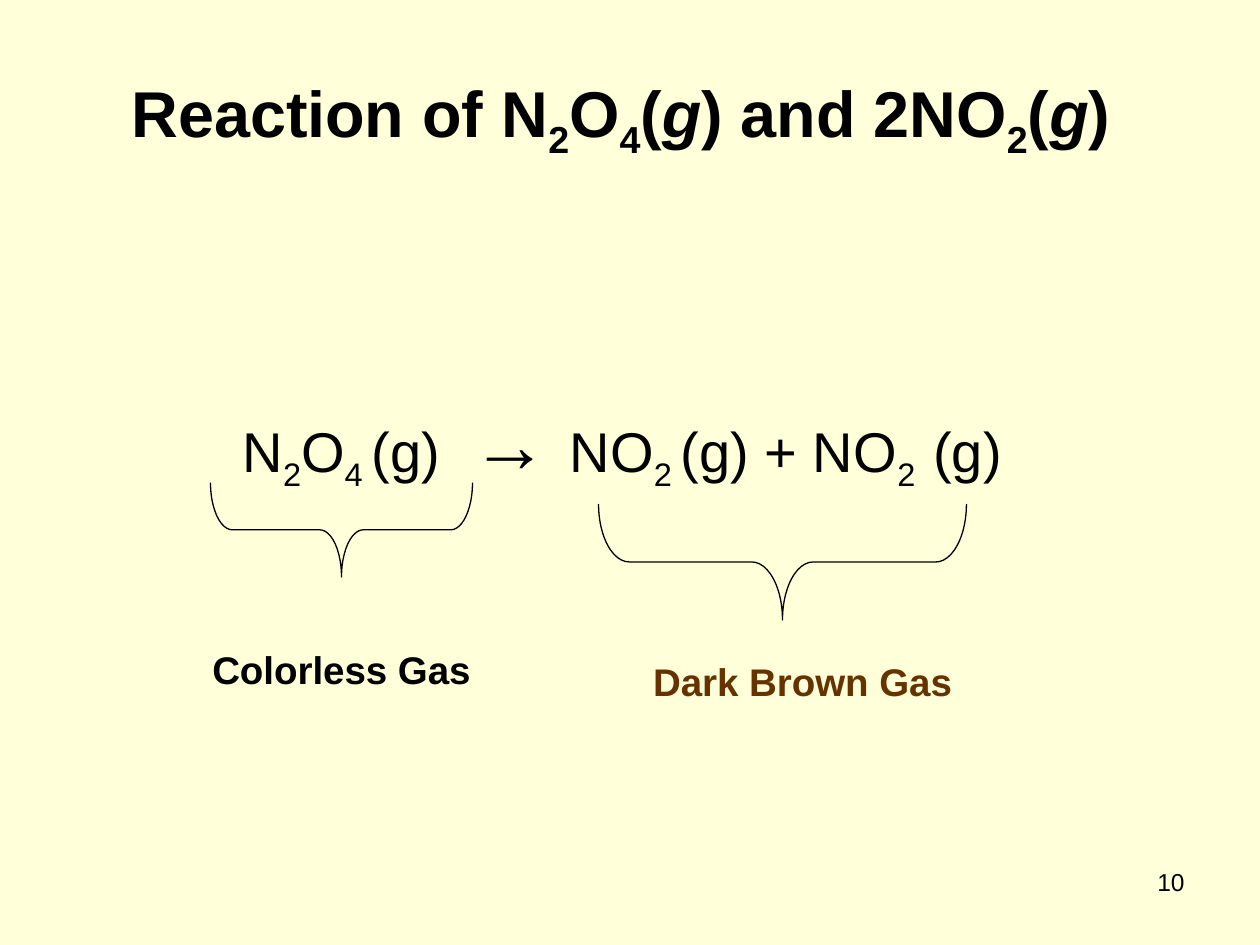
from pptx import Presentation
from pptx.dml.color import RGBColor
from pptx.enum.shapes import MSO_SHAPE
from pptx.enum.text import MSO_ANCHOR, PP_ALIGN
from pptx.util import Inches, Pt

BACKGROUND, BLACK, BROWN = "FFFFD9", "000000", "663300"
SUB = {"subscript": True}
ITALIC = {"italic": True}

TITLE = [
    ("Reaction of N", {}), ("2", SUB), ("O", {}), ("4", SUB), ("(", {}), ("g", ITALIC),
    (") and 2NO", {}), ("2", SUB), ("(", {}), ("g", ITALIC), (") ", {}),
]
EQUATION = [
    ("N", {}), ("2", SUB), ("O", {}), ("4 ", SUB), ("(g)  ", {}), ("→ ", {"size": 44}),
    ("NO", {}), ("2 ", SUB), ("(g) + NO", {}), ("2  ", SUB), ("(g) ", {}),
]
# left, top, width, height as they appear on the slide, then the curve of the brace
BRACES = [
    (4.75, 4.0, 2.92, 0.92, 0.265),
    (1.67, 3.83, 2.08, 0.75, 0.231),
]
GAS_LABELS = [
    ("Dark Brown Gas", 4.83, 5.17, BROWN),
    ("Colorless Gas", 1.17, 5.08, BLACK),
]


def rgb(color):
    return RGBColor.from_string(color)


def add_text(slide, text, left, top, width, height, *, size, color=BLACK, bold=False,
             align=PP_ALIGN.CENTER, anchor=MSO_ANCHOR.TOP):
    """Add one paragraph; text is a string or a list of (string, format) runs."""
    box = slide.shapes.add_textbox(Inches(left), Inches(top), Inches(width), Inches(height))
    frame = box.text_frame
    frame.word_wrap = True
    frame.vertical_anchor = anchor
    paragraph = frame.paragraphs[0]
    paragraph.alignment = align
    for words, style in [(text, {})] if isinstance(text, str) else text:
        run = paragraph.add_run()
        run.text = words
        font = run.font
        font.name = "Arial"
        font.size = Pt(style.get("size", size))
        font.bold = bold
        font.italic = style.get("italic", False)
        font.color.rgb = rgb(color)
        if style.get("subscript"):
            run._r.get_or_add_rPr().set("baseline", "-25000")


def add_brace_below(slide, left, top, width, height, curve):
    """Add a right brace turned to point down; its frame is set before rotation."""
    brace = slide.shapes.add_shape(
        MSO_SHAPE.RIGHT_BRACE,
        Inches(left + (width - height) / 2), Inches(top + (height - width) / 2),
        Inches(height), Inches(width))
    brace.rotation = 90
    brace.adjustments[0] = curve
    brace.adjustments[1] = 0.5
    brace.shadow.inherit = False
    brace.fill.background()
    brace.line.color.rgb = rgb(BLACK)
    brace.line.width = Pt(0.75)


def main():
    presentation = Presentation()
    presentation.slide_width, presentation.slide_height = Inches(10), Inches(7.5)
    slide = presentation.slides.add_slide(presentation.slide_layouts[6])
    slide.background.fill.solid()
    slide.background.fill.fore_color.rgb = rgb(BACKGROUND)

    add_text(slide, "10", 7.17, 6.83, 2.33, 0.52, size=14, align=PP_ALIGN.RIGHT)
    add_text(slide, TITLE, 0.5, 0.3, 9, 1.25, size=37, bold=True, anchor=MSO_ANCHOR.MIDDLE)
    add_text(slide, EQUATION, 0.5, 3.09, 9, 0.8, size=32)
    for brace in BRACES:
        add_brace_below(slide, *brace)
    for text, left, top, color in GAS_LABELS:
        add_text(slide, text, left, top, 3.08, 0.47, size=22, color=color, bold=True)

    presentation.save("out.pptx")


if __name__ == "__main__":
    main()
